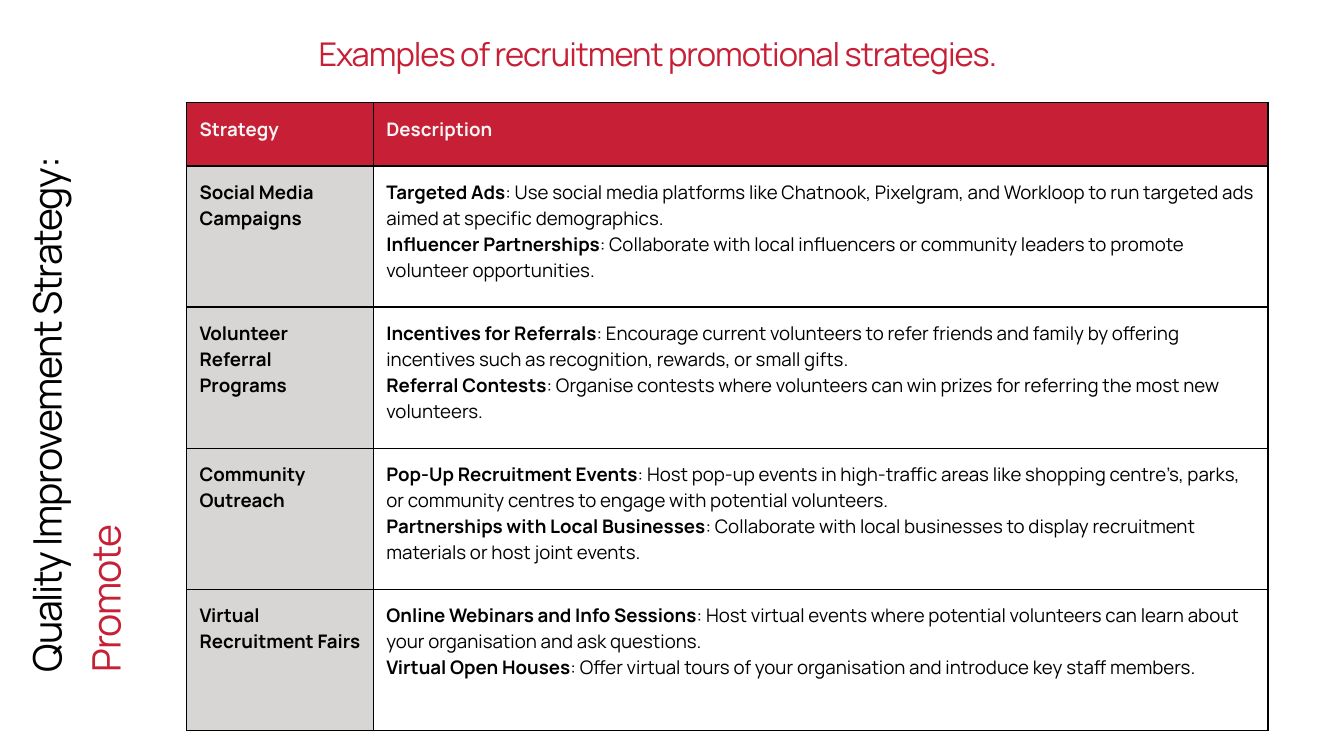
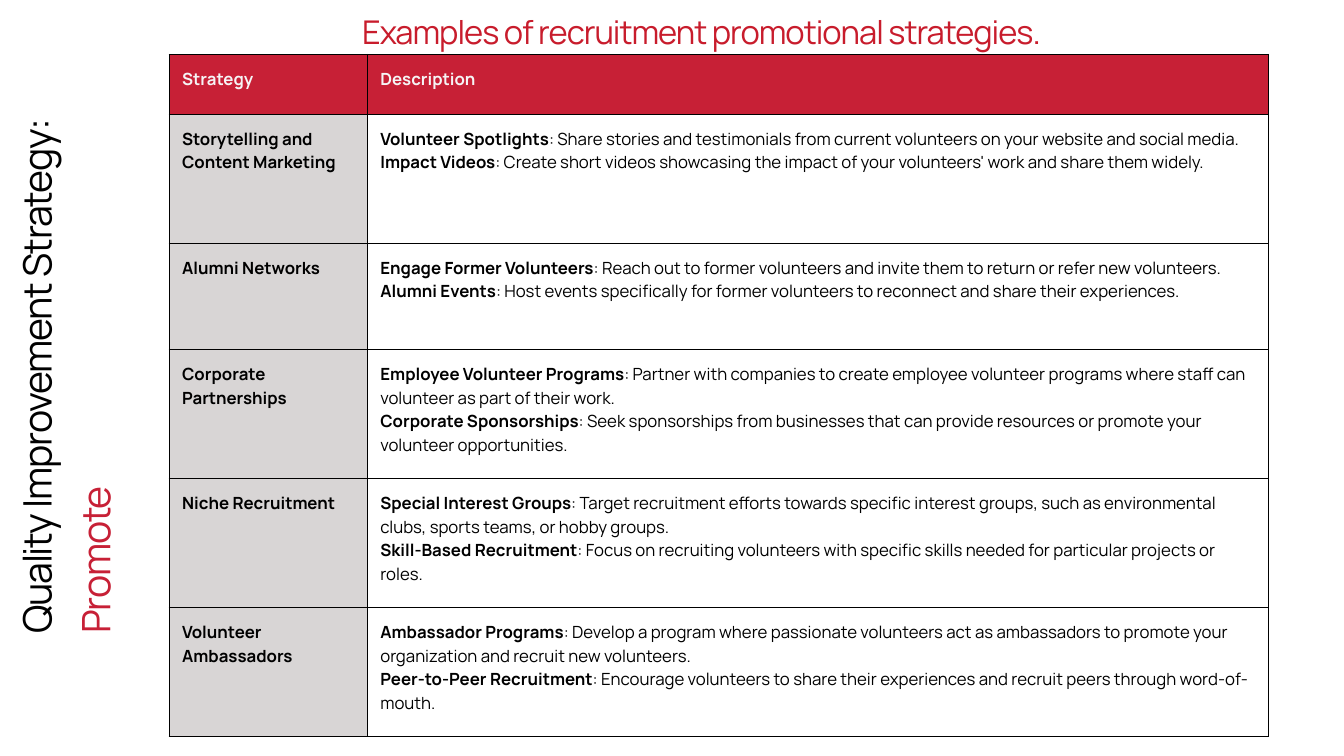
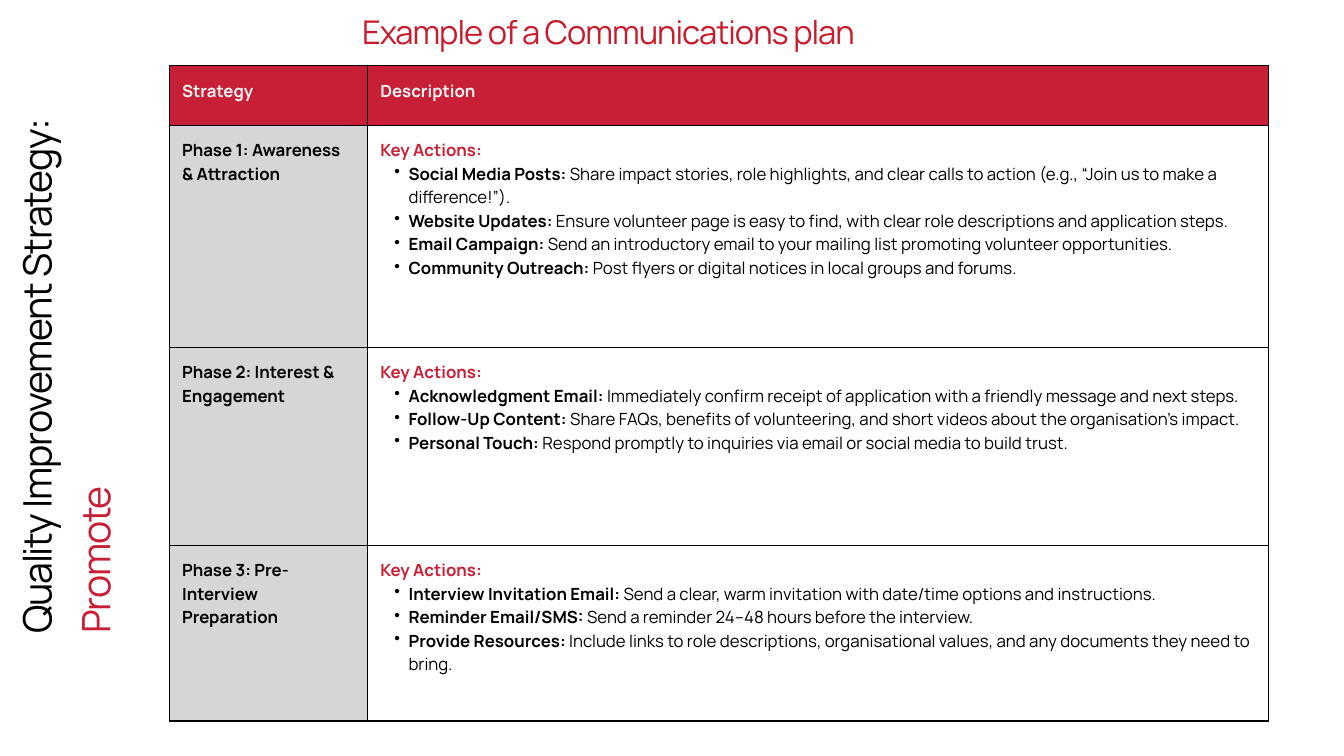
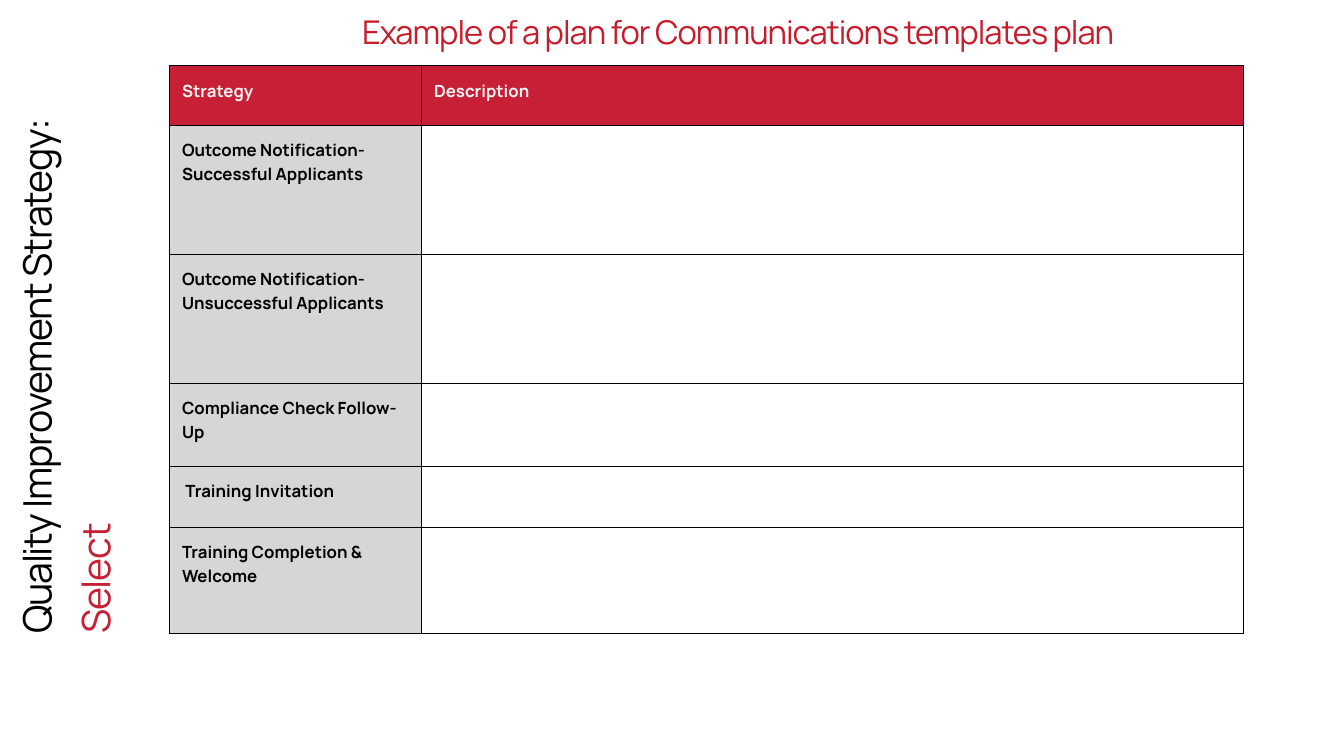
import pptx
import pptx.dml.color
import pptx.enum.text
import pptx.oxml
import pptx.oxml.ns
import pptx.util
from dataclasses import dataclass
from pptx.util import Inches

TEXT = pptx.enum.text


# Colours and type sizes
@dataclass(frozen=True)
class Theme:
    font: str = "Manrope"
    red: str = "C72036"
    bright_red: str = "C81C2C"
    grey: str = "D8D5D5"
    black: str = "000000"
    off_white: str = "F6F4F5"
    heading_size: int = 35
    sidebar_size: int = 42
    heading_leading: float = 1.3
    sidebar_leading: float = 1.5
    table_leading: float = 1.4
    cell_margin: float = 0.19
    border: float = 1.5


def rgb(colour):
    return pptx.dml.color.RGBColor.from_string(colour)


def set_all(target, values):
    for name, value in values.items():
        setattr(target, name, value)


class Deck:
    def __init__(self, theme):
        self.theme = theme
        self.show = pptx.Presentation()
        set_all(self.show, {"slide_width": Inches(20), "slide_height": Inches(11.25)})
        self.slide = None

    def new_slide(self):
        self.slide = self.show.slides.add_slide(self.show.slide_layouts[5])

    def add_runs(self, paragraph, runs, size, leading, spacing=None):
        """Fill a paragraph with (text, colour, bold) runs."""
        set_all(paragraph, {
            "alignment": TEXT.PP_ALIGN.LEFT,
            "line_spacing": pptx.util.Pt(size * leading),
            "space_before": pptx.util.Pt(0),
        })
        for text, colour, bold in runs:
            run = paragraph.add_run()
            run.text = text
            set_all(run.font, {"name": self.theme.font, "size": pptx.util.Pt(size), "bold": bold})
            run.font.color.rgb = rgb(colour)
            if spacing:
                run._r.get_or_add_rPr().set("spc", str(spacing))

    def frame(self, shape, box):
        left, top, width, height = map(Inches, box)
        set_all(shape, {"left": left, "top": top, "width": width, "height": height})
        set_all(shape.text_frame, {
            "word_wrap": True,
            "auto_size": TEXT.MSO_AUTO_SIZE.SHAPE_TO_FIT_TEXT,
            "vertical_anchor": TEXT.MSO_ANCHOR.TOP,
            "margin_left": 0, "margin_right": 0, "margin_top": 0, "margin_bottom": 0,
        })
        return shape.text_frame.paragraphs[0]

    def heading(self, text, left, top, height, colour):
        paragraph = self.frame(self.slide.shapes.title, (left, top, 12.18, height))
        self.add_runs(paragraph, [(text, colour, False)],
                      self.theme.heading_size, self.theme.heading_leading, -110)

    def sidebar(self, stage, left, top):
        strip = self.slide.shapes.add_textbox(0, 0, 0, 0)
        paragraph = self.frame(strip, (left, top, 8.31, 1.75))
        strip.rotation = 270
        self.add_runs(paragraph, [("Quality Improvement Strategy: ", self.theme.black, False),
                                  (stage, self.theme.red, False)],
                      self.theme.sidebar_size, self.theme.sidebar_leading, -130)

    def style_cell(self, cell, fill):
        margin = Inches(self.theme.cell_margin)
        set_all(cell, {f"margin_{side}": margin for side in ("left", "right", "top", "bottom")})
        properties = cell._tc.get_or_add_tcPr()
        for side in "LRTB":
            properties.append(pptx.oxml.parse_xml(
                f'<a:ln{side} {pptx.oxml.ns.nsdecls("a")} w="{pptx.util.Pt(self.theme.border)}">'
                f'<a:solidFill><a:srgbClr val="{self.theme.black}"/></a:solidFill></a:ln{side}>'))
        if fill:
            cell.fill.solid()
            cell.fill.fore_color.rgb = rgb(fill)
        else:
            cell.fill.background()

    def bullet(self, paragraph):
        paragraph.level = 1
        properties = paragraph._p.get_or_add_pPr()
        for name, length in {"marL": 0.42, "indent": -0.21}.items():
            properties.set(name, str(Inches(length)))
        properties.append(pptx.oxml.parse_xml(
            f'<a:buChar {pptx.oxml.ns.nsdecls("a")} char="•"/>'))

    def strategy_table(self, left, top, widths, heights, rows, size, key_actions=False):
        theme = self.theme
        table = self.slide.shapes.add_table(
            len(heights), 2, Inches(left), Inches(top),
            Inches(sum(widths)), Inches(sum(heights))).table
        set_all(table, {"first_row": False, "horz_banding": False})
        for column, width in zip(table.columns, widths):
            column.width = Inches(width)
        for row, height in zip(table.rows, heights):
            row.height = Inches(height)

        # Header row
        for cell, label in zip(table.rows[0].cells, ("Strategy", "Description")):
            self.style_cell(cell, theme.red)
            self.add_runs(cell.text_frame.paragraphs[0], [(label, theme.off_white, True)],
                          size, theme.table_leading)

        # Strategy rows
        for index, (strategy, actions) in enumerate(rows, start=1):
            name_cell, detail_cell = table.rows[index].cells
            self.style_cell(name_cell, theme.grey)
            self.style_cell(detail_cell, None)
            self.add_runs(name_cell.text_frame.paragraphs[0], [(strategy, theme.black, True)],
                          size, theme.table_leading)
            lines = [[(lead, theme.black, True), (detail, theme.black, False)]
                     for lead, detail in actions]
            if key_actions:
                lines.insert(0, [("Key Actions:", theme.red, True)])
            body = detail_cell.text_frame
            for number, runs in enumerate(lines):
                paragraph = body.add_paragraph() if number else body.paragraphs[0]
                self.add_runs(paragraph, runs, size, theme.table_leading)
                if key_actions and number:
                    self.bullet(paragraph)


# Content
PROMOTION = [
    ("Social Media Campaigns", [
        ("Targeted Ads", ": Use social media platforms like Chatnook, Pixelgram, and Workloop to run "
         "targeted ads aimed at specific demographics."),
        ("Influencer Partnerships", ": Collaborate with local influencers or community leaders to "
         "promote volunteer opportunities."),
    ]),
    ("Volunteer Referral Programs", [
        ("Incentives for Referrals", ": Encourage current volunteers to refer friends and family by "
         "offering incentives such as recognition, rewards, or small gifts."),
        ("Referral Contests", ": Organise contests where volunteers can win prizes for referring the "
         "most new volunteers."),
    ]),
    ("Community Outreach", [
        ("Pop-Up Recruitment Events", ": Host pop-up events in high-traffic areas like shopping "
         "centre’s, parks, or community centres to engage with potential volunteers."),
        ("Partnerships with Local Businesses", ": Collaborate with local businesses to display "
         "recruitment materials or host joint events."),
    ]),
    ("Virtual Recruitment Fairs", [
        ("Online Webinars and Info Sessions", ": Host virtual events where potential volunteers can "
         "learn about your organisation and ask questions."),
        ("Virtual Open Houses", ": Offer virtual tours of your organisation and introduce key staff "
         "members."),
    ]),
]

MORE_PROMOTION = [
    ("Storytelling and Content Marketing", [
        ("Volunteer Spotlights", ": Share stories and testimonials from current volunteers on your "
         "website and social media."),
        ("Impact Videos", ": Create short videos showcasing the impact of your volunteers' work and "
         "share them widely."),
    ]),
    ("Alumni Networks", [
        ("Engage Former Volunteers", ": Reach out to former volunteers and invite them to return or "
         "refer new volunteers."),
        ("Alumni Events", ": Host events specifically for former volunteers to reconnect and share "
         "their experiences."),
    ]),
    ("Corporate Partnerships", [
        ("Employee Volunteer Programs", ": Partner with companies to create employee volunteer "
         "programs where staff can volunteer as part of their work."),
        ("Corporate Sponsorships", ": Seek sponsorships from businesses that can provide resources "
         "or promote your volunteer opportunities."),
    ]),
    ("Niche Recruitment", [
        ("Special Interest Groups", ": Target recruitment efforts towards specific interest groups, "
         "such as environmental clubs, sports teams, or hobby groups."),
        ("Skill-Based Recruitment", ": Focus on recruiting volunteers with specific skills needed "
         "for particular projects or roles."),
    ]),
    ("Volunteer Ambassadors", [
        ("Ambassador Programs", ": Develop a program where passionate volunteers act as ambassadors "
         "to promote your organization and recruit new volunteers."),
        ("Peer-to-Peer Recruitment", ": Encourage volunteers to share their experiences and recruit "
         "peers through word-of-mouth."),
    ]),
]

COMMUNICATIONS = [
    ("Phase 1: Awareness & Attraction", [
        ("Social Media Posts:", " Share impact stories, role highlights, and clear calls to action "
         "(e.g., “Join us to make a difference!”)."),
        ("Website Updates: ", "Ensure volunteer page is easy to find, with clear role descriptions "
         "and application steps."),
        ("Email Campaign: ", "Send an introductory email to your mailing list promoting volunteer "
         "opportunities."),
        ("Community Outreach:", " Post flyers or digital notices in local groups and forums."),
    ]),
    ("Phase 2: Interest & Engagement", [
        ("Acknowledgment Email:", " Immediately confirm receipt of application with a friendly "
         "message and next steps."),
        ("Follow-Up Content:", " Share FAQs, benefits of volunteering, and short videos about the "
         "organisation’s impact."),
        ("Personal Touch:", " Respond promptly to inquiries via email or social media to build trust."),
    ]),
    ("Phase 3: Pre-Interview Preparation", [
        ("Interview Invitation Email:", " Send a clear, warm invitation with date/time options and "
         "instructions."),
        ("Reminder Email/SMS:", " Send a reminder 24–48 hours before the interview."),
        ("Provide Resources: ", "Include links to role descriptions, organisational values, and any "
         "documents they need to bring."),
    ]),
]

TEMPLATES = [(name, []) for name in (
    "Outcome Notification- Successful Applicants",
    "Outcome Notification- Unsuccessful Applicants",
    "Compliance Check Follow-Up",
    " Training Invitation",
    "Training Completion & Welcome",
)]


def main():
    theme = Theme()
    deck = Deck(theme)
    promotion_title = "Examples of recruitment promotional strategies."

    # Slide 1: promotional strategies
    deck.new_slide()
    deck.strategy_table(2.78, 1.53, (2.78, 13.31), [0.94] + [2.1] * 4, PROMOTION, 20)
    deck.sidebar("Promote", -3.12, 4.97)
    deck.heading(promotion_title, 4.74, 0.45, 1.27, theme.red)

    # Slides 2 to 4: further strategies, communications plan, templates plan
    wide, narrow = (2.95, 13.41), (3.75, 12.23)
    for title, title_height, stage, top, widths, heights, rows in (
        (promotion_title, 1.27, "Promote", 0.81, wide,
         [0.89, 1.92, 1.58, 1.92, 1.92, 1.92], MORE_PROMOTION),
        ("Example of a Communications plan", 1.27, "Promote", 0.98, wide,
         [0.89, 3.3, 2.95, 2.61], COMMUNICATIONS),
        ("Example of a plan for Communications templates plan", 1.91, "Select", 0.98, narrow,
         [0.89, 1.92, 1.92, 1.23, 0.91, 1.58], TEMPLATES),
    ):
        deck.new_slide()
        deck.strategy_table(2.52, top, widths, heights, rows, 18,
                            key_actions=rows is COMMUNICATIONS)
        deck.sidebar(stage, -3.27, 4.4)
        deck.heading(title, 5.39, 0.13, title_height, theme.bright_red)

    deck.show.save("out.pptx")


if __name__ == "__main__":
    main()
